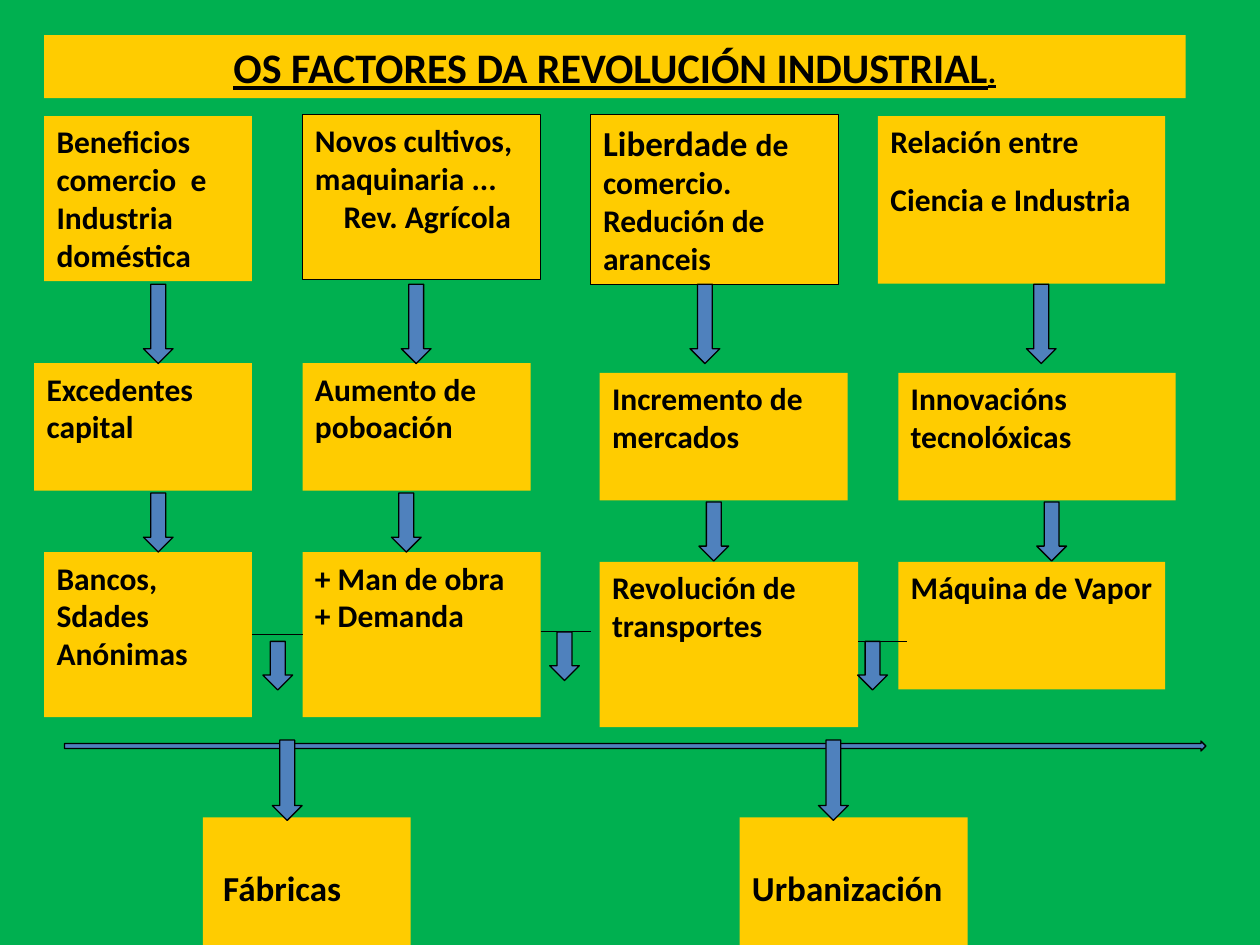
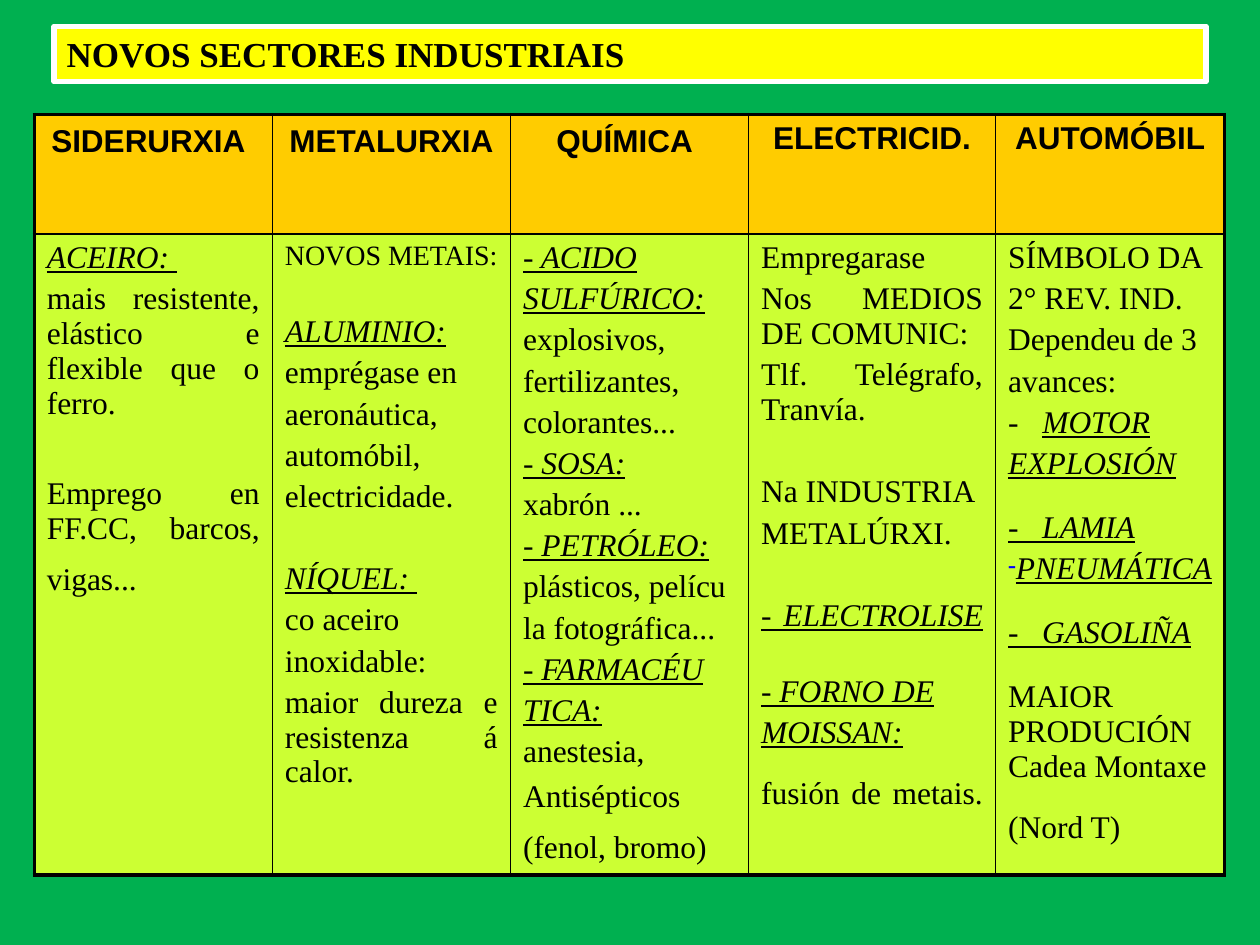
from dataclasses import dataclass

from lxml import etree
from pptx import Presentation, util as u
from pptx.dml.color import RGBColor
from pptx.enum import shapes, text
from pptx.oxml import ns

Cm, Pt = u.Cm, u.Pt
COLOURS = {
    "ground": "00B050", "gold": "FFCC00", "lime": "CCFF33", "yellow": "FFFF00",
    "arrow": "4F81BD", "ink": "000000", "white": "FFFFFF", "dash": "0000FF",
}
LEFT, CENTER, JUSTIFY = text.PP_ALIGN.LEFT, text.PP_ALIGN.CENTER, text.PP_ALIGN.JUSTIFY


@dataclass
class Line:
    """One paragraph: a main span and an optional tail with its own style."""
    text: str
    size: float = 18
    emph: bool = False
    gap: float = 0
    indent: float = 0
    align: text.PP_ALIGN = None
    dash: bool = False
    tail: str = ""
    tail_size: float = 18
    tail_font: str = None
    tail_emph: bool = False


def colour(name):
    return RGBColor.from_string(COLOURS[name])


def add_xml(parent, tag, **attributes):
    return etree.SubElement(parent, ns.qn(tag), attributes)


class Sheet:
    """Holds the deck, its style and the current page."""

    def __init__(self):
        self.deck = Presentation()
        self.deck.slide_width, self.deck.slide_height = Cm(25.4), Cm(19.05)
        self.page = None

    def new_page(self):
        self.page = self.deck.slides.add_slide(self.deck.slide_layouts[5])
        fill = self.page.background.fill
        fill.solid()
        fill.fore_color.rgb = colour("ground")

    def paint(self, shape, fill, line=None, width=0.75):
        shape.fill.solid()
        shape.fill.fore_color.rgb = colour(fill)
        if line:
            shape.line.color.rgb = colour(line)
            shape.line.width = Pt(width)
        else:
            shape.line.fill.background()

    def format_span(self, span, size, font, bold, italic, underline):
        face = span.font
        face.name, face.size, face.bold = font, Pt(size), bold
        face.italic, face.underline = italic, underline
        face.color.rgb = colour("ink")

    def fill_text(self, frame, lines, font, bold=True, align=LEFT, italic=True, lead=0):
        """Fill a text frame; lead is the space before as a share of the size."""
        for number, line in enumerate(lines):
            para = frame.paragraphs[0] if number == 0 else frame.add_paragraph()
            para.text = line.text
            para.alignment = line.align or align
            if number:
                tallest = max(line.size, line.tail_size if line.tail else 0)
                para.space_before = Pt(round(lead * tallest + line.gap, 1))
            for span in para.runs:
                self.format_span(span, line.size, font, bold,
                                 line.emph and italic, line.emph)
            if line.tail:
                span = para.add_run()
                span.text = line.tail
                self.format_span(span, line.tail_size, line.tail_font or font, bold,
                                 line.tail_emph and italic, line.tail_emph)
            if line.indent:
                para._p.get_or_add_pPr().set("marL", str(Cm(line.indent)))
            if line.dash:
                self.add_dash(para)

    def add_dash(self, para):
        properties = para._p.get_or_add_pPr()
        tint = add_xml(properties, "a:buClr")
        add_xml(tint, "a:srgbClr", val=COLOURS["dash"])
        add_xml(properties, "a:buSzPct", val="75000")
        add_xml(properties, "a:buChar", char="-")

    def title(self, at, line, font, fill, border=None, width=0.75, align=LEFT):
        box = self.page.shapes.title
        box.left, box.top, box.width, box.height = map(Cm, at)
        self.paint(box, fill, border, width)
        frame = box.text_frame
        frame.word_wrap = True
        frame.auto_size = text.MSO_AUTO_SIZE.NONE
        frame.vertical_anchor = text.MSO_ANCHOR.TOP
        self.fill_text(frame, [line], font, align=align, italic=False)

    def box(self, at, lines, border=None, inset=(0.25, 0.13)):
        box = self.page.shapes.add_shape(shapes.MSO_SHAPE.RECTANGLE, *map(Cm, at))
        box.shadow.inherit = False
        self.paint(box, "gold", border)
        frame = box.text_frame
        frame.word_wrap = True
        frame.vertical_anchor = text.MSO_ANCHOR.TOP
        frame.margin_left, frame.margin_top = map(Cm, inset)
        self.fill_text(frame, lines, "Calibri")
        return box

    def arrow(self, left, top, width, height):
        arrow = self.page.shapes.add_shape(
            shapes.MSO_SHAPE.RIGHT_ARROW, Cm(left), Cm(top), Cm(width), Cm(height))
        arrow.shadow.inherit = False
        self.paint(arrow, "arrow", "ink")
        return arrow

    def down_arrow(self, centre, top, length, thickness=0.6):
        arrow = self.arrow(centre - length / 2, top + (length - thickness) / 2,
                           length, thickness)
        arrow.rotation = 90

    def line(self, start, end, y, boxes=None):
        line = self.page.shapes.add_connector(
            shapes.MSO_CONNECTOR.STRAIGHT, Cm(start), Cm(y), Cm(end), Cm(y))
        line.line.color.rgb = colour("ink")
        line.line.width = Pt(0.75)
        add_xml(line._element.spPr, "a:effectLst")
        if boxes:
            line.begin_connect(boxes[0], 3)
            line.end_connect(boxes[1], 1)

    def cell_borders(self, cell, outer):
        """Draw four edges; those on the rim of the table are thicker."""
        properties = cell._tc.get_or_add_tcPr()
        for side in "LRTB":
            width = Pt(2.25 if side in outer else 1)
            edge = add_xml(properties, f"a:ln{side}", w=str(width))
            fill = add_xml(edge, "a:solidFill")
            add_xml(fill, "a:srgbClr", val=COLOURS["ink"])

    def table(self, left, top, widths, heights, headers, columns):
        table = self.page.shapes.add_table(
            2, len(widths), Cm(left), Cm(top), Cm(sum(widths)), Cm(sum(heights))).table
        for row, height in zip(table.rows, heights):
            row.height = Cm(height)
        last = len(widths) - 1
        for index, width in enumerate(widths):
            table.columns[index].width = Cm(width)
            rim = ("L" if index == 0 else "") + ("R" if index == last else "")
            for row, fill in enumerate(("gold", "lime")):
                cell = table.cell(row, index)
                self.cell_borders(cell, rim + "TB"[row])
                cell.fill.solid()
                cell.fill.fore_color.rgb = colour(fill)
            self.fill_text(table.cell(0, index).text_frame, [headers[index]],
                           "Arial", align=CENTER)
            self.fill_text(table.cell(1, index).text_frame, columns[index],
                           "Times New Roman", bold=False, align=JUSTIFY, lead=0.2)


def factors(sheet):
    sheet.new_page()
    sheet.title((0.89, 0.71, 23.01, 1.27),
                Line("OS FACTORES DA REVOLUCIÓN INDUSTRIAL", 24, emph=True,
                     tail=".", tail_emph=True),
                "Calibri", "gold", align=CENTER)

    # Causes
    sheet.box((0.89, 2.34, 4.19, 3.33),
              [Line("Beneficios comercio  e Industria doméstica")])
    sheet.box((6.1, 2.31, 4.8, 3.33),
              [Line("Novos cultivos, maquinaria ..."),
               Line("Rev. Agrícola", indent=0.58)], "ink")
    sheet.box((11.91, 2.31, 5, 3.43),
              [Line("Liberdade ", 20, tail="de comercio."),
               Line("Redución de aranceis")], "ink")
    sheet.box((17.7, 2.34, 5.79, 3.38),
              [Line("Relación entre"), Line("Ciencia e Industria", gap=11)])

    # Effects
    for left, top, width, words in (
            (0.69, 7.32, 4.39, "Excedentes capital"),
            (6.1, 7.32, 4.6, "Aumento de poboación"),
            (12.09, 7.52, 5, "Incremento de mercados"),
            (18.11, 7.52, 5.59, "Innovacións tecnolóxicas")):
        sheet.box((left, top, width, 2.57), [Line(words)])

    # Outcomes
    banks = sheet.box((0.89, 11.13, 4.19, 3.33),
                      [Line("Bancos, Sdades"), Line("Anónimas")])
    labour = sheet.box((6.1, 11.13, 4.8, 3.33),
                       [Line("+ Man de obra"), Line("+ Demanda")])
    sheet.box((12.09, 11.33, 5.21, 3.33), [Line("Revolución de transportes")])
    sheet.box((18.11, 11.33, 5.38, 2.57), [Line("Máquina de Vapor")])

    # Results
    sheet.box((4.09, 16.48, 4.19, 2.74), [Line("Fábricas", 20)], inset=(0.41, 0.99))
    sheet.box((14.91, 16.48, 4.6, 2.74), [Line("Urbanización", 20)], inset=(0.25, 0.99))

    # Arrows between the rows
    for centre in (3.19, 8.39, 14.21, 20.99):
        sheet.down_arrow(centre, 5.73, 1.6)
    for centre, top in ((3.19, 9.94), (8.19, 9.94), (14.39, 10.12), (21.2, 10.12)):
        sheet.down_arrow(centre, top, 1.19)

    # Links between the outcomes and the long arrow below
    sheet.line(5.08, 6.1, 12.8, (banks, labour))
    sheet.line(10.9, 11.91, 12.73)
    sheet.line(17.3, 18.29, 12.93)
    sheet.arrow(1.3, 14.94, 23.01, 0.2)
    for centre in (5.79, 16.8):
        sheet.down_arrow(centre, 14.92, 1.62)
    for centre, top in ((5.6, 12.93), (11.38, 12.74), (17.59, 12.93)):
        sheet.down_arrow(centre, top, 0.98)


def sectors(sheet):
    sheet.new_page()
    sheet.title((1.09, 0.53, 23.22, 1.12), Line("NOVOS SECTORES INDUSTRIAIS", 20),
                "Times New Roman", "yellow", "white", 3)

    end = {"tail": " ", "tail_size": 28, "tail_font": "Arial"}
    headers = [Line(name, tail=" ", tail_size=20)
               for name in ("SIDERURXIA", "METALURXIA", "QUÍMICA")]
    headers += [Line("ELECTRICID."), Line("AUTOMÓBIL")]

    steel = [
        Line("ACEIRO: ", emph=True, align=LEFT),
        Line("mais resistente, elástico e flexible que o ferro."),
        Line("Emprego en FF.CC, barcos, vigas...", gap=26, **end),
    ]
    metals = [
        Line("NOVOS METAIS:", 16),
        Line("ALUMINIO:", emph=True, gap=21),
        Line("emprégase en"), Line("aeronáutica,"), Line("automóbil,"),
        Line("electricidade."),
        Line("NÍQUEL: ", emph=True, gap=23.5),
        Line("co aceiro"), Line("inoxidable:"),
        Line("maior dureza e resistenza á calor."),
    ]
    chemistry = [
        Line("- ACIDO", emph=True), Line("SULFÚRICO:", emph=True),
        Line("explosivos,"), Line("fertilizantes,"), Line("colorantes..."),
        Line("- SOSA:", emph=True), Line("xabrón ..."),
        Line("- PETRÓLEO:", emph=True),
        Line("plásticos, pelícu"), Line("la fotográfica..."),
        Line("- FARMACÉU", emph=True), Line("TICA:", emph=True),
        Line("anestesia,"), Line("Antisépticos (fenol, bromo)", **end),
    ]
    electricity = [
        Line("Empregarase"), Line("Nos MEDIOS DE COMUNIC:"),
        Line("Tlf. Telégrafo, Tranvía."),
        Line("Na INDUSTRIA", gap=23.5), Line("METALÚRXI."),
        Line("- ELECTROLISE ", emph=True, gap=23.5, tail=" "),
        Line("- FORNO DE", emph=True), Line("MOISSAN:", emph=True),
        Line("fusión de metais.", **end),
    ]
    cars = [
        Line("SÍMBOLO DA"), Line("2° REV. IND."), Line("Dependeu de 3"),
        Line("avances:"),
        Line("-   ", tail="MOTOR", tail_emph=True), Line("EXPLOSIÓN", emph=True),
        Line("-   LAMIA", emph=True, gap=13),
        Line("PNEUMÁTICA", emph=True, dash=True),
        Line("-   GASOLIÑA", emph=True, gap=13),
        Line("MAIOR PRODUCIÓN\vCadea Montaxe", gap=13),
        Line("(Nord T)", **end),
    ]
    sheet.table(0.69, 2.31, (4.8, 4.8, 4.8, 4.98, 4.62), (2.41, 12.9),
                headers, (steel, metals, chemistry, electricity, cars))


def main():
    sheet = Sheet()
    factors(sheet)
    sectors(sheet)
    sheet.deck.save("out.pptx")


if __name__ == "__main__":
    main()
